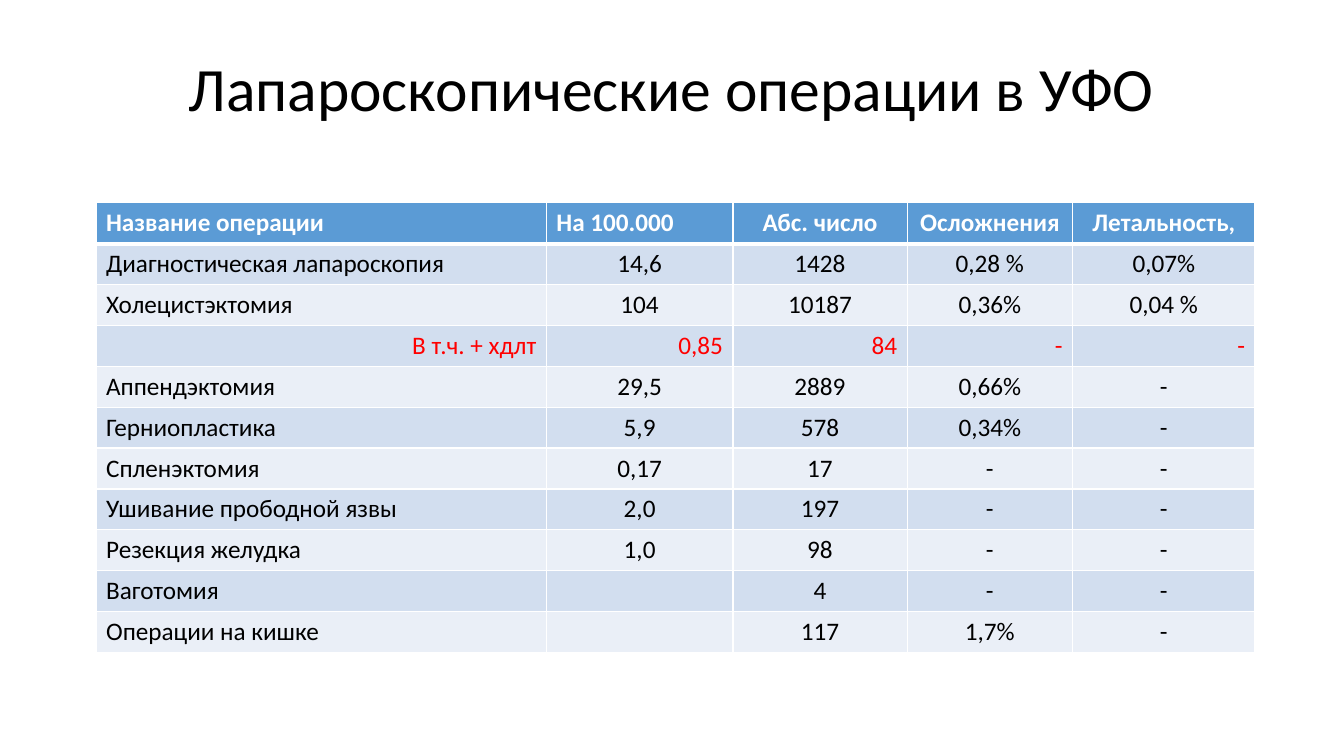
from lxml import etree
from pptx import Presentation
from pptx import util as u
from pptx.dml.color import RGBColor
from pptx.enum import text
from pptx.oxml.ns import qn

TITLE = "Лапароскопические операции в УФО"
HEADER = ("Название операции", "На 100.000", "Абс. число", "Осложнения", "Летальность,")
OPERATIONS = [
    ("Диагностическая лапароскопия", "14,6", "1428", "0,28 %", "0,07%"),
    ("Холецистэктомия", "104", "10187", "0,36%", "0,04 %"),
    ("В т.ч. + хдлт", "0,85", "84", "-", "-"),
    ("Аппендэктомия", "29,5", "2889", "0,66%", "-"),
    ("Герниопластика", "5,9", "578", "0,34%", "-"),
    ("Спленэктомия", "0,17", "17", "-", "-"),
    ("Ушивание прободной язвы", "2,0", "197", "-", "-"),
    ("Резекция желудка", "1,0", "98", "-", "-"),
    ("Ваготомия", "", "4", "-", "-"),
    ("Операции на кишке", "", "117", "1,7%", "-"),
]
SUBSET_ROW = 3
COLUMN_WIDTHS = (11.35, 4.7, 4.39, 4.17, 4.6)
ROW_HEIGHT = 1.03
COLORS = {
    "header": "5B9BD5",
    "odd": "D2DEEF",
    "even": "EAEFF7",
    "white": "FFFFFF",
    "black": "000000",
    "red": "FF0000",
}
LEFT, CENTER, RIGHT = text.PP_ALIGN.LEFT, text.PP_ALIGN.CENTER, text.PP_ALIGN.RIGHT


def write(frame, words, size=18, color="black", bold=False, align=LEFT, spacing=None):
    para = frame.paragraphs[0]
    para.alignment = align
    para.line_spacing = spacing
    if not words:
        para.font.size = u.Pt(size)
        return
    span = para.add_run()
    span.text = words
    span.font.name = "Calibri"
    span.font.size = u.Pt(size)
    span.font.bold = bold
    span.font.color.rgb = RGBColor.from_string(COLORS[color])


def add_borders(cell, bottom, top):
    properties = cell._tc.get_or_add_tcPr()
    for side, width in (("lnL", 1), ("lnR", 1), ("lnT", top), ("lnB", bottom)):
        line = etree.SubElement(properties, qn(f"a:{side}"), w=str(u.Pt(width)))
        fill = etree.SubElement(line, qn("a:solidFill"))
        etree.SubElement(fill, qn("a:srgbClr"), val=COLORS["white"])


def style_of(row, column):
    if row == 0:
        return {"color": "white", "bold": True, "align": LEFT if column < 2 else CENTER}
    if row == SUBSET_ROW:
        return {"color": "red", "align": RIGHT}
    return {"align": CENTER if column else LEFT}


def main():
    deck = Presentation()
    deck.slide_width, deck.slide_height = u.Cm(33.87), u.Cm(19.05)
    page = deck.slides.add_slide(deck.slide_layouts[5])

    title = page.shapes.title
    title.left, title.top = u.Cm(2.33), u.Cm(1.01)
    title.width, title.height = u.Cm(29.21), u.Cm(2.57)
    title.text_frame.vertical_anchor = text.MSO_ANCHOR.MIDDLE
    write(title.text_frame, TITLE, size=44, align=CENTER, spacing=0.9)

    rows = [HEADER, *OPERATIONS]
    table = page.shapes.add_table(
        len(rows), len(HEADER), u.Cm(2.42), u.Cm(5.11),
        u.Cm(sum(COLUMN_WIDTHS)), u.Cm(ROW_HEIGHT * len(rows)),
    ).table
    for column, width in zip(table.columns, COLUMN_WIDTHS):
        column.width = u.Cm(width)
    for r, values in enumerate(rows):
        table.rows[r].height = u.Cm(ROW_HEIGHT)
        band = "header" if r == 0 else "odd" if r % 2 else "even"
        for c, words in enumerate(values):
            cell = table.cell(r, c)
            add_borders(cell, bottom=3 if r == 0 else 1, top=3 if r == 1 else 1)
            cell.fill.solid()
            cell.fill.fore_color.rgb = RGBColor.from_string(COLORS[band])
            write(cell.text_frame, words, **style_of(r, c))

    deck.save("out.pptx")


if __name__ == "__main__":
    main()
